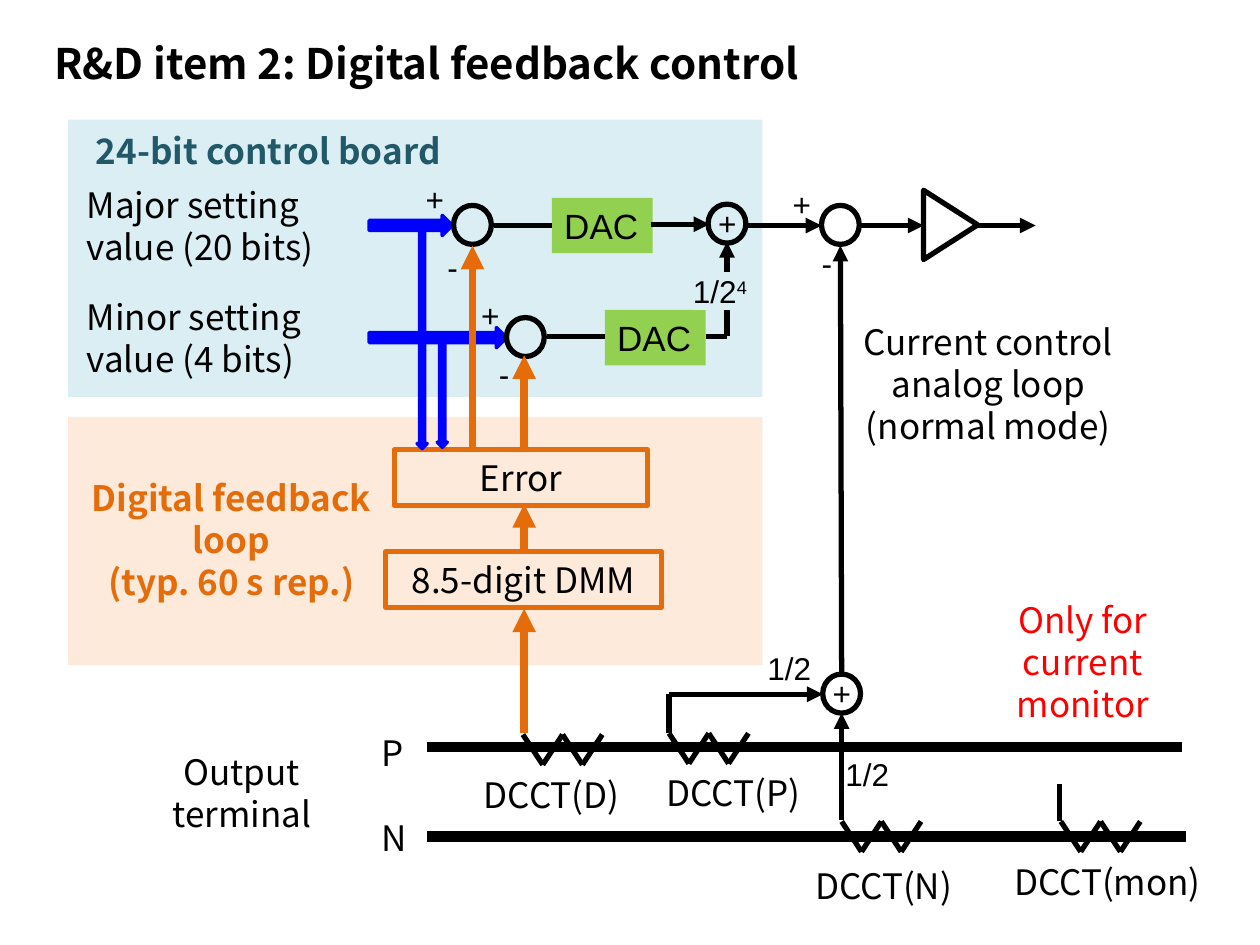
import dataclasses

import lxml.etree
import pptx
import pptx.dml.color
import pptx.enum.shapes
import pptx.enum.text
import pptx.oxml.ns
import pptx.util

Inches, Pt = pptx.util.Inches, pptx.util.Pt
SHAPE = pptx.enum.shapes.MSO_SHAPE
ALIGN = pptx.enum.text.PP_ALIGN
ANCHOR = pptx.enum.text.MSO_ANCHOR
qn = pptx.oxml.ns.qn


@dataclasses.dataclass(frozen=True)
class Theme:
    """Colours, fonts, type sizes and line widths."""
    black: str = "000000"
    red: str = "FF0000"
    blue: str = "0000FF"
    green: str = "92D050"
    orange: str = "E46C0A"
    teal: str = "215968"
    peach: str = "FDEADA"
    ice: str = "DBEEF4"
    sans: str = "Noto Sans CJK JP"
    sign: str = "Arial"
    title: int = 24
    body: int = 20
    small: int = 18
    wire: float = 3
    feedback: float = 4.5
    bus: float = 6
    arrow: float = 2


def rgb(value):
    """Turn a hex string into a colour."""
    return pptx.dml.color.RGBColor.from_string(value)


class Diagram:
    """Draws the elements of a block diagram on one slide."""

    def __init__(self, slide, theme):
        self.s, self.t = slide, theme

    def run(self, p, text, font, size, color, bold=False):
        """Add one formatted run."""
        r = p.add_run()
        r.text = text
        r.font.name, r.font.size, r.font.bold = font, Pt(size), bold
        r.font.color.rgb = rgb(color)
        return r

    def label(self, sp, paragraphs, font=None, size=None, color=None, bold=False,
              align=ALIGN.LEFT, anchor=ANCHOR.TOP, inset=True, wrap=False):
        """Fill a shape with paragraphs and return the last one."""
        font, size = font or self.t.sans, size or self.t.body
        tf = sp.text_frame
        tf.word_wrap, tf.vertical_anchor = wrap, anchor
        tf.auto_size = pptx.enum.text.MSO_AUTO_SIZE.SHAPE_TO_FIT_TEXT
        tf.margin_left = tf.margin_right = Inches(0.1 if inset else 0)
        tf.margin_top = tf.margin_bottom = Inches(0.05 if inset else 0)
        for i, text in enumerate(paragraphs):
            p = tf.add_paragraph() if i else tf.paragraphs[0]
            p.alignment, p.space_before = align, Pt(0)
            if font == self.t.sans:
                p.line_spacing = Pt(1.2 * size)
            for j, line in enumerate(text.split("\n")):
                if j:
                    p.add_line_break()
                self.run(p, line, font, size, color or self.t.black, bold)
        return p

    def title(self, text, at):
        """Place and format the title placeholder."""
        sp = self.s.shapes.title
        sp.left, sp.top, sp.width, sp.height = map(Inches, at)
        self.label(sp, [text], size=self.t.title, bold=True)

    def text(self, at, *paragraphs, **style):
        """Add a text box."""
        self.label(self.s.shapes.add_textbox(*map(Inches, at)), paragraphs, **style)

    def sign(self, at, text, inset=False):
        """Add a small sign or gain label."""
        self.text(at, text, font=self.t.sign, size=self.t.small, inset=inset)

    def shape(self, kind, at, fill=None, line=None, width=3, rotation=0):
        """Add a preset shape."""
        sp = self.s.shapes.add_shape(kind, *map(Inches, at))
        sp.shadow.inherit = False
        sp.rotation = rotation
        self.paint(sp, fill, line, width)
        return sp

    def paint(self, sp, fill, line, width):
        """Set the fill and outline of a shape."""
        if fill:
            sp.fill.solid()
            sp.fill.fore_color.rgb = rgb(fill)
        else:
            sp.fill.background()
        if line:
            sp.line.color.rgb, sp.line.width = rgb(line), Pt(width)
        else:
            sp.line.fill.background()

    def box(self, at, text, fill=None):
        """Add an orange outlined block with a centred label."""
        sp = self.shape(SHAPE.RECTANGLE, at, fill, self.t.orange)
        self.label(sp, [text], align=ALIGN.CENTER, anchor=ANCHOR.MIDDLE, wrap=True)

    def dac(self, left, top):
        """Add a converter block."""
        sp = self.shape(SHAPE.RECTANGLE, (left, top, 0.8, 0.44), self.t.green)
        self.label(sp, ["DAC"], font=self.t.sign)

    def node(self, left, top):
        """Add a summing node."""
        self.shape(SHAPE.OVAL, (left, top, 0.3, 0.31), line=self.t.black)

    def block_arrow(self, at, rotation=0):
        """Add a blue data arrow."""
        self.shape(SHAPE.RIGHT_ARROW, at, self.t.blue, self.t.blue, self.t.arrow, rotation)

    def line(self, x1, y1, x2, y2, arrow=False, color=None, width=None, shapes=None):
        """Add a straight line, with an arrowhead at its end if asked."""
        c = (shapes or self.s.shapes).add_connector(
            pptx.enum.shapes.MSO_CONNECTOR.STRAIGHT, *map(Inches, (x1, y1, x2, y2)))
        c.line.color.rgb = rgb(color or self.t.black)
        c.line.width = Pt(width or self.t.wire)
        if arrow:
            lxml.etree.SubElement(c.line._get_or_add_ln(), qn("a:tailEnd"), type="triangle")
        lxml.etree.SubElement(c._element.spPr, qn("a:effectLst"))

    def feedback(self, x, y1, y2):
        """Add an upward orange feedback arrow."""
        self.line(x, y1, x, y2, True, self.t.orange, self.t.feedback)

    def coil(self, left, top):
        """Add a zigzag sensor as a group of four strokes."""
        shapes = self.s.shapes.add_group_shape().shapes
        xs = [left + 0.63 * i / 4 for i in range(5)]
        for i in range(4):
            ys = (top, top + 0.24) if i % 2 == 0 else (top + 0.24, top)
            self.line(xs[i], ys[0], xs[i + 1], ys[1], shapes=shapes)

    def amplifier(self, left, top, width, height):
        """Add an amplifier triangle pointing right."""
        fb = self.s.shapes.build_freeform(Inches(left), Inches(top))
        fb.add_line_segments([(Inches(left + width), Inches(top + height / 2)),
                              (Inches(left), Inches(top + height))], close=True)
        sp = fb.convert_to_shape()
        sp.shadow.inherit = False
        self.paint(sp, None, self.t.black, self.t.wire)


def main():
    """Build the slide."""
    prs = pptx.Presentation()
    prs.slide_width, prs.slide_height = Inches(10), Inches(7.5)
    t = Theme()
    d = Diagram(prs.slides.add_slide(prs.slide_layouts[5]), t)
    d.title("R&D item 2: Digital feedback control", (0.33, 0.25, 6.74, 0.5))

    d.shape(SHAPE.RECTANGLE, (0.54, 3.31, 5.51, 1.97), t.peach)
    d.shape(SHAPE.RECTANGLE, (0.54, 0.95, 5.51, 2.2), t.ice)
    for y, right in ((6.64, 9.41), (5.93, 9.38)):
        d.line(3.39, y, right, y, width=t.bus)
    for left, top in ((5.31, 5.82), (6.68, 6.52), (4.15, 5.83), (8.42, 6.52)):
        d.coil(left, top)

    d.box((3.06, 4.38, 2.19, 0.44), "8.5-digit DMM")
    d.box((3.13, 3.57, 2.01, 0.44), "Error", t.peach)
    d.block_arrow((2.93, 1.71, 0.66, 0.16))
    d.block_arrow((2.93, 2.6, 1.09, 0.16))
    d.dac(4.38, 1.57)
    d.dac(4.8, 2.46)
    for left, top in ((3.6, 1.63), (4.02, 2.52), (5.62, 1.62), (6.52, 1.63), (6.53, 5.35)):
        d.node(left, top)

    for ends in ((3.92, 1.79, 4.38, 1.79), (4.34, 2.67, 4.8, 2.67), (5.6, 2.67, 5.77, 2.67),
                 (5.31, 5.82, 5.31, 5.51), (8.41, 6.52, 8.41, 6.22)):
        d.line(*ends)
    for ends in ((5.17, 1.78, 5.63, 1.78), (5.77, 2.67, 5.77, 1.92), (5.93, 1.79, 6.52, 1.79),
                 (6.82, 1.79, 7.33, 1.79), (7.76, 1.79, 8.22, 1.79), (6.68, 5.35, 6.67, 1.95),
                 (5.31, 5.51, 6.53, 5.51), (6.68, 6.51, 6.68, 5.66)):
        d.line(*ends, arrow=True)
    d.amplifier(7.33, 1.51, 0.43, 0.55)

    gain = d.shape(SHAPE.RECTANGLE, (5.5, 2.16, 0.44, 0.3), t.ice)
    p = d.label(gain, ["1/2"], font=t.sign, size=t.small, inset=False)
    r = d.run(p, "4", t.sign, t.small, t.black)
    r._r.get_or_add_rPr().set("baseline", "30000")

    d.block_arrow((2.49, 2.66, 1.72, 0.08), 90)
    d.block_arrow((3.09, 3.09, 0.84, 0.08), 90)
    for x, y1, y2 in ((4.16, 5.82, 4.83), (4.16, 4.38, 4), (4.16, 3.56, 2.82), (3.75, 3.56, 1.95)):
        d.feedback(x, y1, y2)

    for left, top in ((5.6, 1.57), (3.28, 1.38), (3.72, 2.3), (6.51, 5.3)):
        d.sign((left, top, 0.35, 0.4), "+", inset=True)
    d.sign((6.29, 1.47, 0.15, 0.3), "+")
    for left, top in ((6.52, 1.94), (3.55, 1.97), (3.96, 2.82)):
        d.sign((left, top, 0.09, 0.3), "-")
    for left, top in ((6.09, 5.15), (6.71, 5.99)):
        d.sign((left, top, 0.35, 0.3), "1/2")

    for at, label in (((2.93, 5.76, 0.41, 0.44), "P"), ((2.93, 6.43, 0.41, 0.44), "N"),
                      ((0.59, 1.41, 2.2, 0.77), "Major setting\nvalue (20 bits)"),
                      ((0.59, 2.3, 2.02, 0.77), "Minor setting\nvalue (4 bits)"),
                      ((5.19, 6.07, 1.42, 0.44), "DCCT(P)"),
                      ((6.37, 6.81, 1.42, 0.44), "DCCT(N)"),
                      ((3.74, 6.09, 1.42, 0.44), "DCCT(D)"),
                      ((7.95, 6.78, 1.83, 0.44), "DCCT(mon)")):
        d.text(at, label)
    d.text((1.25, 5.91, 1.34, 0.77), "Output\nterminal", align=ALIGN.CENTER)

    note = {"align": ALIGN.CENTER, "inset": False}
    d.text((6.81, 2.54, 2.07, 1.01), "Current control", "analog loop", "(normal mode)", **note)
    d.text((8.05, 4.75, 1.09, 1.01), "Only for\ncurrent", "monitor", color=t.red, **note)
    d.text((0.64, 3.78, 2.39, 1.01), "Digital feedback\nloop\n(typ. 60 s rep.)",
           color=t.orange, bold=True, **note)
    d.text((0.63, 1.03, 3, 0.34), "24-bit control board", color=t.teal, bold=True, **note)
    prs.save("out.pptx")


if __name__ == "__main__":
    main()
